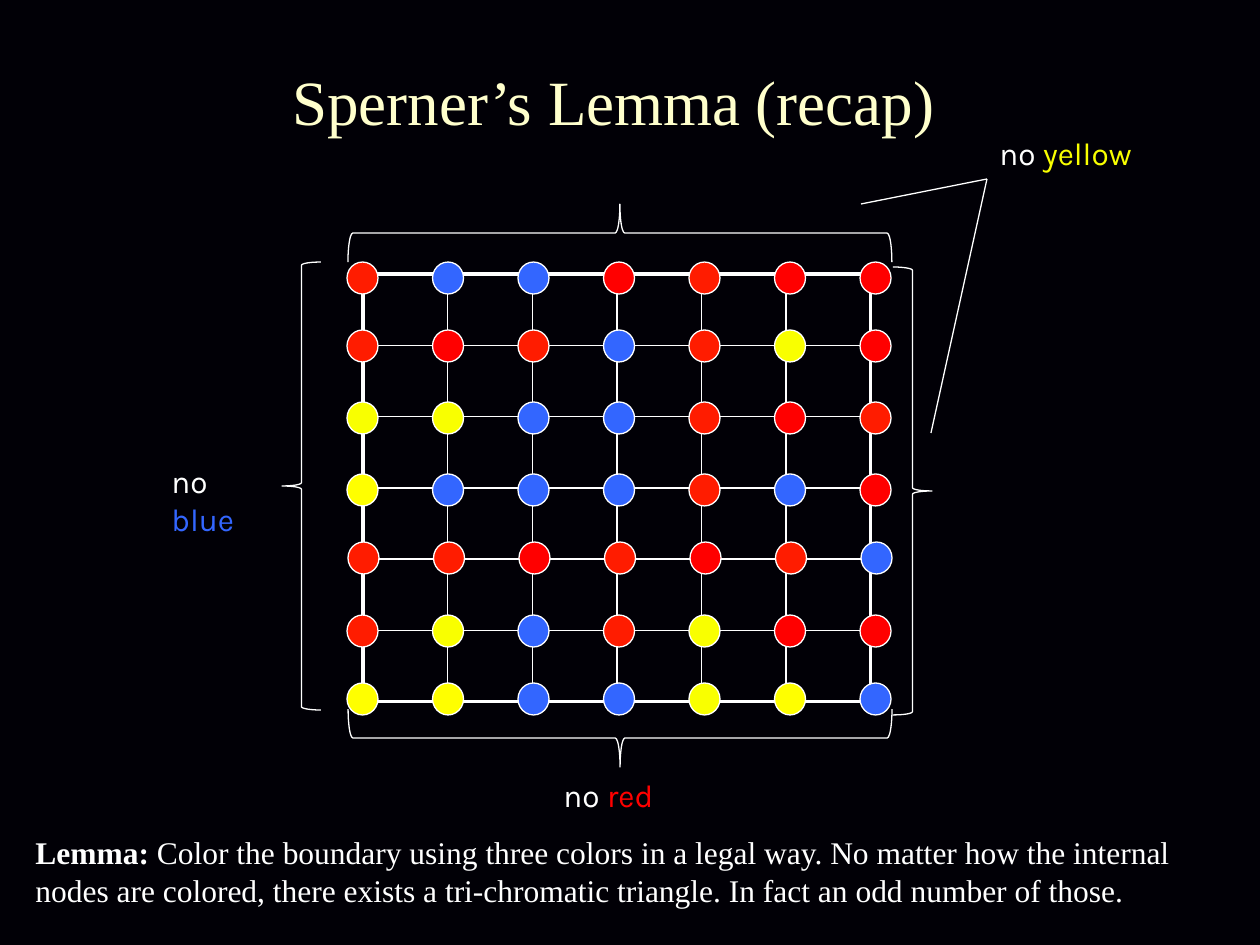
from lxml import etree
from pptx import Presentation
from pptx import util as u
from pptx.dml.color import RGBColor
from pptx.enum import shapes, text
from pptx.oxml.ns import qn

EMU_PER_PX = 914400 / 126
SERIF, SANS = "Times New Roman", "Karla"
COLORS = {
    "night": "010006", "white": "FFFFFF", "cream": "FFFFCC",
    "red": "FF0000", "orange": "FF1C00", "blue": "3366FF",
    "lemon": "F9FF00", "yellow": "FFFF00",
}
NODE_COLORS = {"r": "red", "o": "orange", "b": "blue", "l": "lemon", "y": "yellow"}
# Top and left offset of each row of nodes, then its colours
NODE_ROWS = [
    (0, 0, "obbrorr"),
    (68, 0, "orobolr"),
    (140, 0, "llbboro"),
    (212, 0, "ybbbobr"),
    (280, 1, "oororob"),
    (353, 0, "olbolrr"),
    (421, 0, "yybblyb"),
]
CELLS = 6
NODE_WIDTH, NODE_HEIGHT = 31, 32


def px(*lengths):
    return [u.Emu(round(length * EMU_PER_PX)) for length in lengths]


def color(name):
    return RGBColor.from_string(COLORS[name])


def add_span(para, words, font, size, name, bold=None):
    span = para.add_run()
    span.text = words
    span.font.name, span.font.size, span.font.bold = font, u.Pt(size), bold
    span.font.color.rgb = color(name)


def set_line(shape):
    shape.line.color.rgb = color("white")
    shape.line.width = u.Pt(0.75)


def add_title(page, box):
    title = page.shapes.title
    title.left, title.top, title.width, title.height = px(*box)
    frame = title.text_frame
    frame.vertical_anchor = text.MSO_ANCHOR.MIDDLE
    para = frame.paragraphs[0]
    para.alignment = text.PP_ALIGN.CENTER
    add_span(para, "Sperner’s Lemma (recap)", SERIF, 36, "cream")


def add_text(page, box, spans, wrap):
    frame = page.shapes.add_textbox(*px(*box)).text_frame
    frame.word_wrap = wrap
    frame.auto_size = text.MSO_AUTO_SIZE.SHAPE_TO_FIT_TEXT
    for span in spans:
        add_span(frame.paragraphs[0], *span)


def add_label(page, box, word, name, wrap=False):
    spans = [("no ", SANS, 18, "white"), (word, SANS, 18, name)]
    add_text(page, box, spans, wrap)


def set_borders(cell, outer):
    """Draw all four borders, thicker on the sides named in outer."""
    props = cell._tc.get_or_add_tcPr()
    for index, side in enumerate("LRTB"):
        width = u.Pt(2.25 if side in outer else 1)
        line = etree.Element(qn(f"a:ln{side}"), w=str(width))
        fill = etree.SubElement(line, qn("a:solidFill"))
        etree.SubElement(fill, qn("a:srgbClr"), val=COLORS["white"])
        props.insert(index, line)


def add_grid(page, box):
    grid = page.shapes.add_table(CELLS, CELLS, *px(*box)).table
    grid.first_row = grid.horz_banding = False
    last = CELLS - 1
    for row in range(CELLS):
        for column in range(CELLS):
            cell = grid.cell(row, column)
            cell.fill.background()
            edges = {"L": column == 0, "R": column == last,
                     "T": row == 0, "B": row == last}
            set_borders(cell, [side for side, on in edges.items() if on])


def add_nodes(page, box):
    left, top, width, _ = box
    step = (width - NODE_WIDTH) / CELLS
    for down, shift, codes in NODE_ROWS:
        for column, code in enumerate(codes):
            place = px(left + shift + column * step, top + down,
                       NODE_WIDTH, NODE_HEIGHT)
            node = page.shapes.add_shape(shapes.MSO_SHAPE.OVAL, *place)
            node.shadow.inherit = False
            node.fill.solid()
            node.fill.fore_color.rgb = color(NODE_COLORS[code])
            set_line(node)


def add_brace(page, kind, box, rotation=0):
    """Place a brace by its box before rotation."""
    brace = page.shapes.add_shape(kind, *px(*box))
    brace.rotation = rotation
    brace.shadow.inherit = False
    brace.fill.background()
    set_line(brace)


def add_braces(page):
    left, right = shapes.MSO_SHAPE.LEFT_BRACE, shapes.MSO_SHAPE.RIGHT_BRACE
    add_brace(page, right, (591, -39, 58, 544), 270)
    add_brace(page, right, (591, 466, 58, 544), 90)
    add_brace(page, left, (282, 262, 39, 448))
    add_brace(page, right, (893, 267, 39, 448))


def add_pointers(page, tip, starts):
    for start in starts:
        pointer = page.shapes.add_connector(
            shapes.MSO_CONNECTOR.STRAIGHT, *px(*start, *tip))
        set_line(pointer)
        etree.SubElement(pointer._element.spPr, qn("a:effectLst"))


def add_lemma(page, box):
    statement = (
        " Color the boundary using three colors in a legal way. "
        "No matter how the internal nodes are colored, there exists a "
        "tri-chromatic triangle. In fact an odd number of those.")
    spans = [("Lemma:", SERIF, 18, "white", True),
             (statement, SERIF, 18, "white", False)]
    add_text(page, box, spans, True)


def main():
    deck = Presentation()
    deck.slide_width, deck.slide_height = px(1260, 945)
    page = deck.slides.add_slide(deck.slide_layouts[5])
    page.background.fill.solid()
    page.background.fill.fore_color.rgb = color("night")

    add_title(page, (10, 21, 1207, 158))
    add_grid(page, (363, 274, 508, 428))
    add_nodes(page, (347, 262, 544, 453))
    add_lemma(page, (23, 827, 1196, 89))
    add_braces(page)
    add_label(page, (551, 770, 116, 50), "red", "red")
    add_label(page, (159, 456, 120, 50), "blue", "blue", wrap=True)
    add_label(page, (987, 128, 159, 50), "yellow", "lemon")
    add_pointers(page, (987, 179), [(861, 204), (931, 433)])
    deck.save("out.pptx")


if __name__ == "__main__":
    main()
